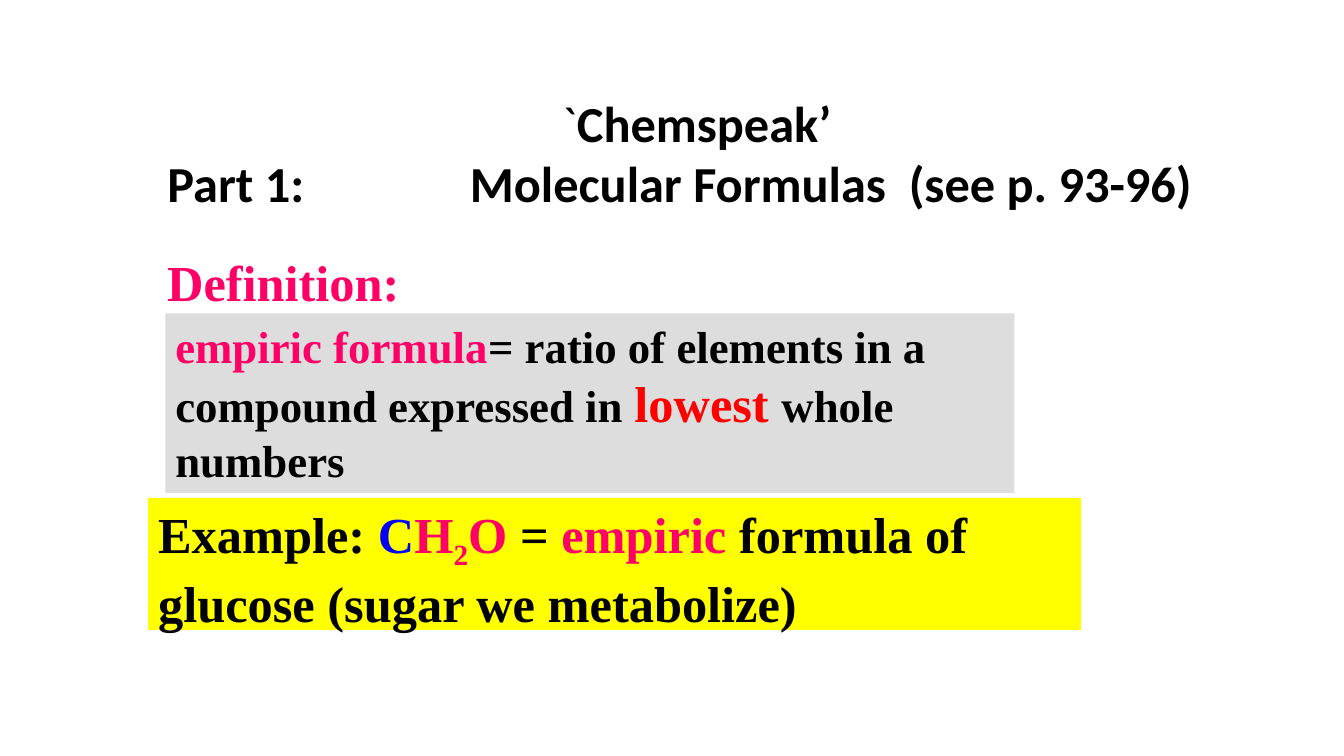
from lxml import etree
from pptx import Presentation
from pptx.dml.color import RGBColor
from pptx.enum import shapes, text
from pptx.oxml.ns import qn
from pptx.util import Inches, Pt

COLORS = {"black": "000000", "pink": "FF0066", "red": "FF0000", "blue": "0000FF",
          "yellow": "FFFF00", "gray": "DDDDDD"}
SERIF = "Times New Roman"


def rgb(name):
    return RGBColor.from_string(COLORS[name])


def add_run(p, words, color="black", size=36, font=SERIF, bold=True):
    r = p.add_run()
    r.text = words
    r.font.name, r.font.size, r.font.bold = font, Pt(size), bold
    r.font.color.rgb = rgb(color)
    return r


def set_half_line_before(p):
    before = etree.SubElement(p._p.get_or_add_pPr(), qn("a:spcBef"))
    etree.SubElement(before, qn("a:spcPct")).set("val", "50000")


def set_tabs(p, *stops):
    """Give the paragraph left tab stops, in inches from the text edge."""
    tabs = etree.SubElement(p._p.get_or_add_pPr(), qn("a:tabLst"))
    for stop in stops:
        tab = etree.SubElement(tabs, qn("a:tab"))
        tab.set("pos", str(Inches(stop)))
        tab.set("algn", "l")


def add_title(slide, left, top, width, height):
    sp = slide.shapes.title
    sp.left, sp.top, sp.width, sp.height = map(Inches, (left, top, width, height))
    tf = sp.text_frame
    tf.word_wrap = True
    tf.auto_size = text.MSO_AUTO_SIZE.NONE
    tf.vertical_anchor = text.MSO_ANCHOR.TOP
    heading, part = tf.paragraphs[0], tf.add_paragraph()
    heading.alignment, part.alignment = text.PP_ALIGN.CENTER, text.PP_ALIGN.LEFT
    add_run(heading, "`", font="Calibri", bold=False)
    add_run(heading, "Chemspeak’  ", font="Calibri")
    add_run(part, "Part 1:\t\tMolecular Formulas  (see p. 93-96)", font="Calibri")
    set_tabs(part, 2, 3)


def add_passage(slide, box, runs, fill=None):
    """Place one paragraph of (words, color, size) runs, on a filled box if asked."""
    box = map(Inches, box)
    if fill:
        sp = slide.shapes.add_shape(shapes.MSO_SHAPE.RECTANGLE, *box)
        sp.shadow.inherit = False
        sp.fill.solid()
        sp.fill.fore_color.rgb = rgb(fill)
        sp.line.fill.background()
    else:
        sp = slide.shapes.add_textbox(*box)
    tf = sp.text_frame
    tf.word_wrap = True
    tf.vertical_anchor = text.MSO_ANCHOR.TOP
    p = tf.paragraphs[0]
    p.alignment = text.PP_ALIGN.LEFT
    set_half_line_before(p)
    return [add_run(p, *run) for run in runs]


def add_example(slide, box):
    runs = add_passage(slide, box, [
        ("Example: ", "black"), ("C", "blue"), ("H", "pink"), ("2", "pink"), ("O", "pink"),
        (" = ", "black"), ("empiric ", "pink"),
        ("formula of glucose (sugar we metabolize)", "black")], "yellow")
    runs[3].font._element.set("baseline", "-25000")


def add_definition(slide, box):
    add_passage(slide, box, [
        ("empiric formula", "pink", 32),
        ("= ratio of elements in a compound expressed in ", "black", 32),
        ("lowest ", "red", 36), ("whole numbers", "black", 32)], "gray")


def main():
    prs = Presentation()
    prs.slide_width, prs.slide_height = Inches(13.33), Inches(7.5)
    slide = prs.slides.add_slide(prs.slide_layouts[5])
    add_title(slide, 1.56, 0.86, 10.93, 1.31)
    add_passage(slide, (1.56, 2.44, 8, 0.71), [("Definition:", "pink")])
    add_example(slide, (1.47, 4.94, 9.25, 1.31))
    add_definition(slide, (1.64, 3.11, 8.42, 1.78))
    prs.save("out.pptx")


if __name__ == "__main__":
    main()
